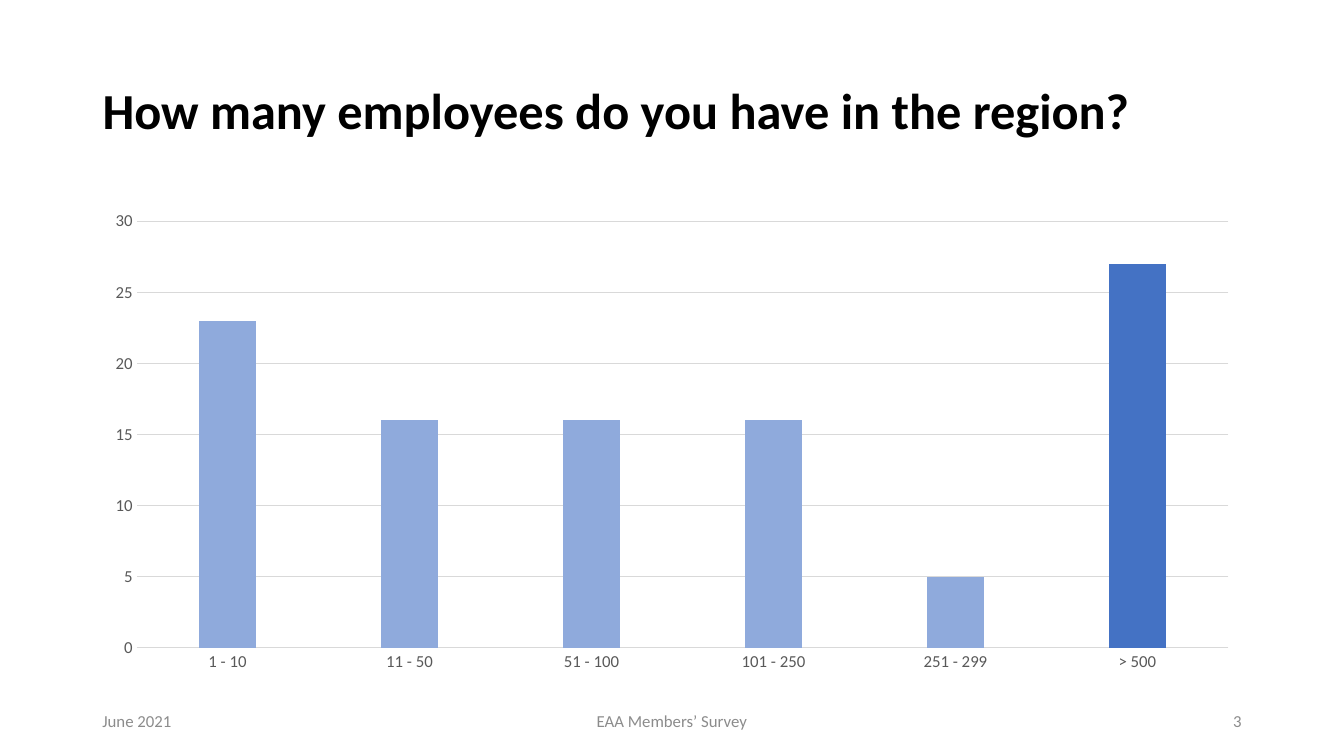
from pptx import Presentation
from pptx.chart.data import CategoryChartData
from pptx.dml.color import RGBColor
from pptx.enum.chart import XL_CHART_TYPE, XL_TICK_MARK
from pptx.enum.text import MSO_ANCHOR, MSO_AUTO_SIZE, PP_ALIGN
from pptx.util import Cm, Pt

COLUMNS = XL_CHART_TYPE.COLUMN_CLUSTERED
NO_TICK = XL_TICK_MARK.NONE
MIDDLE = MSO_ANCHOR.MIDDLE
NO_AUTOFIT = MSO_AUTO_SIZE.NONE
LEFT, CENTER, RIGHT = PP_ALIGN.LEFT, PP_ALIGN.CENTER, PP_ALIGN.RIGHT

FONT = "Calibri"
MARGIN = Cm(2.33)
AXIS_TEXT = "595959"
GRID = "D9D9D9"


def rgb(value):
    return RGBColor.from_string(value)


def style(font, size, color, bold=False):
    font.name = FONT
    font.size = Pt(size)
    font.bold = bold
    font.color.rgb = rgb(color)


prs = Presentation()
prs.slide_width = Cm(33.87)
prs.slide_height = Cm(19.05)
slide = prs.slides.add_slide(prs.slide_layouts[5])
slide.background.fill.solid()
slide.background.fill.fore_color.rgb = rgb("FFFFFF")

question = slide.shapes.title
question.left, question.top = MARGIN, Cm(1.02)
question.width, question.height = Cm(27.1), Cm(3.68)
question.text_frame.word_wrap = True
question.text_frame.auto_size = NO_AUTOFIT
question.text_frame.vertical_anchor = MIDDLE
heading = question.text_frame.paragraphs[0]
heading.alignment = LEFT
heading.line_spacing = 0.9
heading_run = heading.add_run()
heading_run.text = "How many employees do you have in the region?"
style(heading_run.font, 36, "000000", True)

headcounts = CategoryChartData()
headcounts.categories = ["1 - 10", "11 - 50", "51 - 100", "101 - 250", "251 - 299", "> 500"]
headcounts.add_series("Series 1", [23, 16, 16, 16, 5, 27])
chart = slide.shapes.add_chart(
    COLUMNS, MARGIN, Cm(5.08), Cm(29.21), Cm(12.09), headcounts
).chart
chart.has_title = False
chart.has_legend = False
style(chart.font, 10, "000000")

bars = chart.plots[0]
bars.gap_width = 219
bars.overlap = -27
bars.vary_by_categories = False
answers = bars.series[0]
largest_group = answers.points[5]
for columns, color in [(answers, "8FAADC"), (largest_group, "4472C4")]:
    columns.format.fill.solid()
    columns.format.fill.fore_color.rgb = rgb(color)

sizes, counts = chart.category_axis, chart.value_axis
for axis in (sizes, counts):
    axis.major_tick_mark = NO_TICK
    axis.minor_tick_mark = NO_TICK
    style(axis.tick_labels.font, 12, AXIS_TEXT)
counts.minimum_scale = 0
counts.maximum_scale = 30
counts.major_unit = 5
counts.format.line.fill.background()
for line in (sizes.format.line, counts.major_gridlines.format.line):
    line.color.rgb = rgb(GRID)
    line.width = Pt(0.75)

footers = [
    ("June 2021", MARGIN, Cm(7.62), LEFT),
    ("EAA Members’ Survey", Cm(11.22), Cm(11.43), CENTER),
    ("3", Cm(23.92), Cm(7.62), RIGHT),
]
for words, left, width, alignment in footers:
    frame = slide.shapes.add_textbox(left, Cm(17.65), width, Cm(1.02)).text_frame
    frame.word_wrap = True
    frame.vertical_anchor = MIDDLE
    footer = frame.paragraphs[0]
    footer.alignment = alignment
    footer_run = footer.add_run()
    footer_run.text = words
    style(footer_run.font, 12, "8C8C8C")

prs.save("out.pptx")
